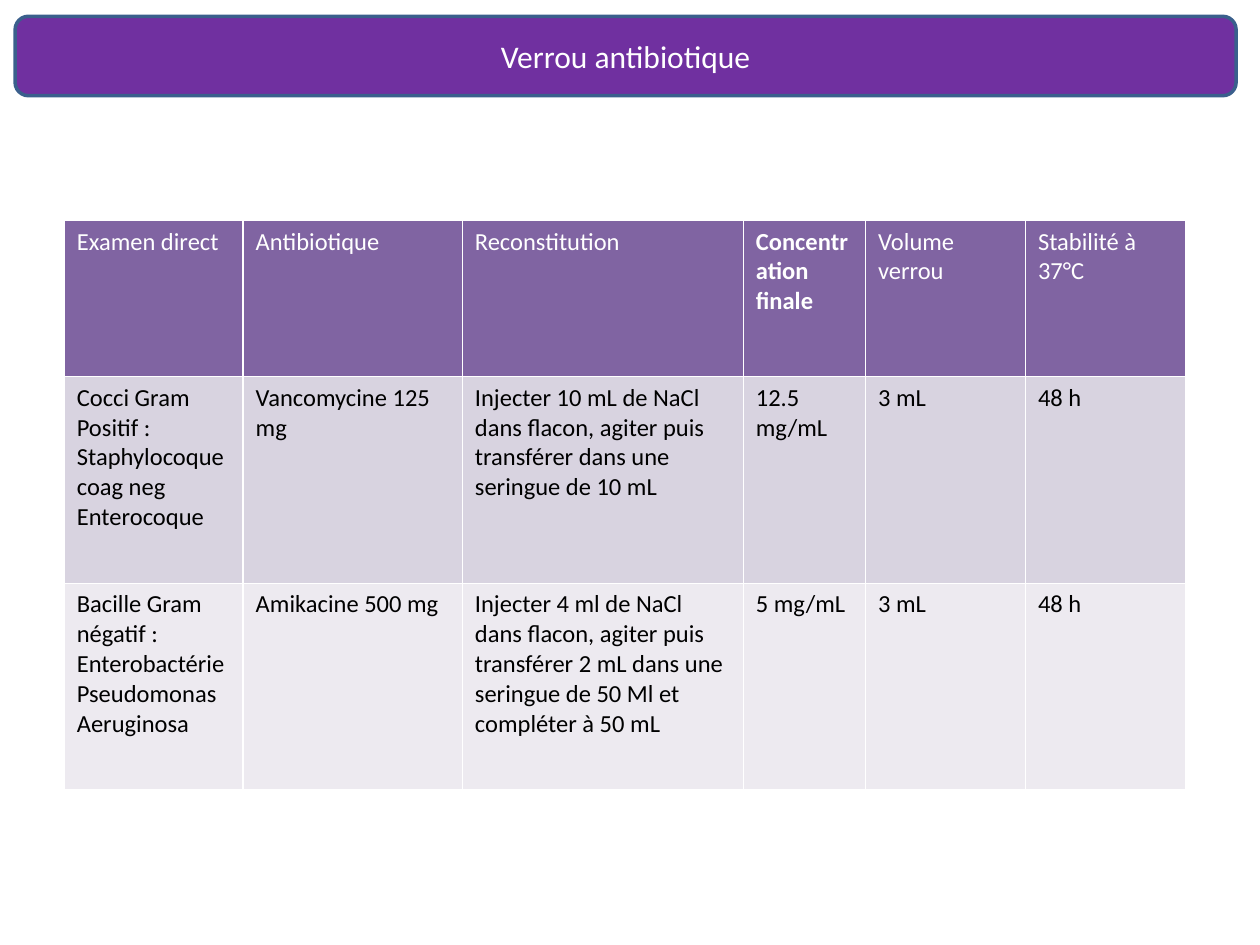
import pptx
import pptx.util
import pptx.dml.color
import pptx.enum.shapes
import pptx.enum.text
import pptx.oxml.ns
from lxml import etree

Inches, Pt = pptx.util.Inches, pptx.util.Pt

# Content; \v is a line break inside a paragraph
TITLE = "Verrou antibiotique"
ROWS = [
    ["Examen direct", "Antibiotique", "Reconstitution",
     "Concentration finale", "Volume verrou", "Stabilité à 37°C"],
    ["Cocci Gram Positif : Staphylocoque coag neg\vEnterocoque",
     "Vancomycine 125 mg",
     "Injecter 10 mL de NaCl dans flacon, agiter puis transférer "
     "dans une seringue de 10 mL",
     "12.5 mg/mL", "3 mL", "48 h"],
    ["Bacille Gram négatif :\vEnterobactérie\vPseudomonas Aeruginosa",
     "Amikacine 500 mg",
     "Injecter 4 ml de NaCl dans flacon, agiter puis transférer 2 mL "
     "dans une seringue de 50 Ml et compléter à 50 mL",
     "5 mg/mL", "3 mL", "48 h"],
]
BOLD_HEADER = "Concentration finale"
COL_WIDTHS = [1.42, 1.74, 2.23, 0.97, 1.27, 1.27]
ROW_HEIGHTS = [1.24, 1.64, 1.64]
ROW_FILLS = ["8064A2", "D8D3E0", "EDEAF0"]
ROW_COLORS = ["FFFFFF", "000000", "000000"]


def rgb(value):
    return pptx.dml.color.RGBColor.from_string(value)


def fill(target, color):
    target.fill.solid()
    target.fill.fore_color.rgb = rgb(color)


def style_text(tf, size, color, bold=False):
    for p in tf.paragraphs:
        for r in p.runs:
            r.font.name = "Calibri"
            r.font.size = Pt(size)
            r.font.bold = bold
            r.font.color.rgb = rgb(color)


def set_borders(cell, color, width):
    """Draw all four edges; they must precede the cell fill in the XML."""
    tc_pr = cell._tc.get_or_add_tcPr()
    qn = pptx.oxml.ns.qn
    for i, edge in enumerate(["a:lnL", "a:lnR", "a:lnT", "a:lnB"]):
        ln = etree.Element(qn(edge), w=str(Pt(width)))
        solid = etree.SubElement(ln, qn("a:solidFill"))
        etree.SubElement(solid, qn("a:srgbClr"), val=color)
        tc_pr.insert(i, ln)


prs = pptx.Presentation()
prs.slide_width, prs.slide_height = Inches(10), Inches(7.5)
s = prs.slides.add_slide(prs.slide_layouts[6])

# Title banner
banner = s.shapes.add_shape(
    pptx.enum.shapes.MSO_SHAPE.ROUNDED_RECTANGLE,
    Inches(0.12), Inches(0.13), Inches(9.69), Inches(0.63))
banner.shadow.inherit = False
fill(banner, "7030A0")
banner.line.color.rgb = rgb("3A5F8C")
banner.line.width = Pt(2)
tf = banner.text_frame
tf.text = TITLE
tf.vertical_anchor = pptx.enum.text.MSO_ANCHOR.MIDDLE
tf.paragraphs[0].alignment = pptx.enum.text.PP_ALIGN.CENTER
style_text(tf, 18, "FFFFFF")

# Antibiotic table
table = s.shapes.add_table(
    len(ROWS), len(COL_WIDTHS), Inches(0.51), Inches(1.75),
    Inches(sum(COL_WIDTHS)), Inches(sum(ROW_HEIGHTS))).table
for column, width in zip(table.columns, COL_WIDTHS):
    column.width = Inches(width)
for row, height, texts, back, color in zip(
        table.rows, ROW_HEIGHTS, ROWS, ROW_FILLS, ROW_COLORS):
    row.height = Inches(height)
    for cell, text in zip(row.cells, texts):
        cell.text_frame.paragraphs[0].text = text
        style_text(cell.text_frame, 14, color, text == BOLD_HEADER)
        fill(cell, back)
        set_borders(cell, "FFFFFF", 1)

prs.save("out.pptx")
